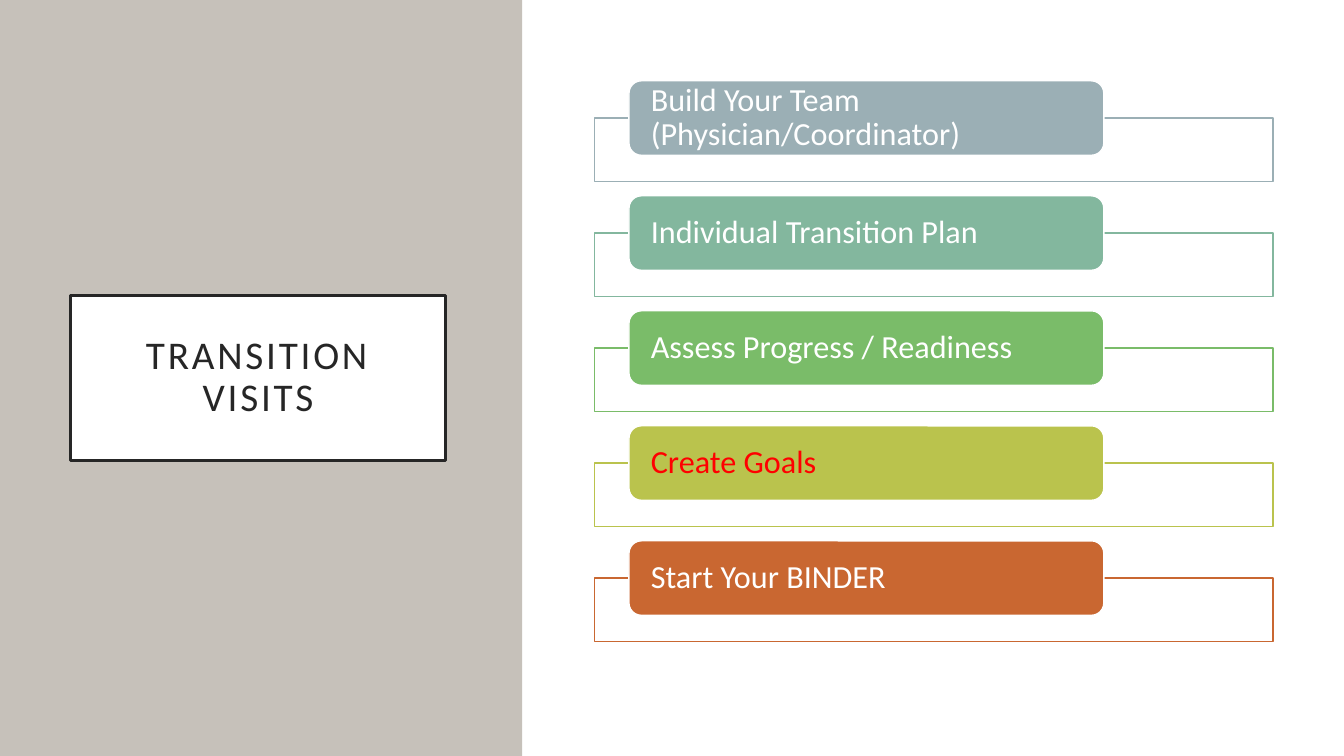
from pptx import Presentation
from pptx.dml.color import RGBColor
from pptx.enum.shapes import MSO_SHAPE as Kind
from pptx.enum.text import MSO_ANCHOR as Anchor, MSO_AUTO_SIZE as Fit, PP_ALIGN as Align
from pptx.util import Pt
from lxml import etree

WHITE = RGBColor(0xFF, 0xFF, 0xFF)
INK = RGBColor(0x26, 0x26, 0x26)
RED = RGBColor(0xFF, 0x00, 0x00)
STONE = RGBColor(0xC6, 0xC1, 0xBA)
SLATE = RGBColor(0x9B, 0xAF, 0xB5)
SAGE = RGBColor(0x83, 0xB7, 0x9E)
GREEN = RGBColor(0x7A, 0xBC, 0x69)
OLIVE = RGBColor(0xBA, 0xC3, 0x4D)
RUST = RGBColor(0xC9, 0x67, 0x31)

FONT = "Calibri"
WIDE, HIGH = 960, 540
TOP, PITCH = 57.7, 82.15

STEPS = [
    ("Build Your Team (Physician/Coordinator)", SLATE, WHITE),
    ("Individual Transition Plan", SAGE, WHITE),
    ("Assess Progress / Readiness", GREEN, WHITE),
    ("Create Goals", OLIVE, RED),
    ("Start Your BINDER", RUST, WHITE),
]


def paint(shape, fill, line=None, width=1):
    shape.fill.solid()
    shape.fill.fore_color.rgb = fill
    if line is None:
        shape.line.fill.background()
    else:
        shape.line.color.rgb = line
        shape.line.width = Pt(width)


def add_box(slide, kind, left, top, width, height, fill, line=None):
    box = slide.shapes.add_shape(kind, Pt(left), Pt(top), Pt(width), Pt(height))
    box.shadow.inherit = False
    paint(box, fill, line)
    return box


def write(shape, text, size, color, align, side, edge):
    frame = shape.text_frame
    frame.word_wrap = True
    frame.auto_size = Fit.NONE
    frame.vertical_anchor = Anchor.MIDDLE
    frame.margin_left = frame.margin_right = Pt(side)
    frame.margin_top = frame.margin_bottom = Pt(edge)
    para = frame.paragraphs[0]
    para.alignment = align
    para.line_spacing = 0.9
    run = para.add_run()
    run.text = text
    run.font.name = FONT
    run.font.size = Pt(size)
    run.font.color.rgb = color
    return run


def add_title(slide, text):
    title = slide.shapes.title
    title.left, title.top = Pt(50.4), Pt(211)
    title.width, title.height = Pt(268), Pt(118)
    paint(title, WHITE, INK, 2.5)
    run = write(title, text, 28, INK, Align.CENTER, 14.4, 14.4)
    # Letter spacing of 2 points
    run.font._element.set("spc", "200")


def add_step(slide, top, text, color, ink):
    frame = add_box(slide, Kind.RECTANGLE, 424.8, top + 26.6, 484.6, 45.4, WHITE, color)
    # Fill at 90 percent opacity
    tint = frame.fill._xPr.solidFill[0]
    name = etree.QName(tint).namespace
    etree.SubElement(tint, f"{{{name}}}alpha", val="90000")
    label = add_box(slide, Kind.ROUNDED_RECTANGLE, 449.3, top, 339.2, 53.2, color, WHITE)
    write(label, text, 23, ink, Align.LEFT, 13, 0)


def main():
    deck = Presentation()
    deck.slide_width, deck.slide_height = Pt(WIDE), Pt(HIGH)
    slide = deck.slides.add_slide(deck.slide_layouts[5])

    # Side panels, the left one behind the title
    side = add_box(slide, Kind.RECTANGLE, 0, 0, 373, HIGH, STONE)
    slide.shapes._spTree.insert(2, side._element)
    add_title(slide, "TRANSITION VISITS")
    add_box(slide, Kind.RECTANGLE, 374, 0, WIDE - 374, HIGH, WHITE)

    # Steps, evenly spaced
    for row, (text, color, ink) in enumerate(STEPS):
        add_step(slide, TOP + row * PITCH, text, color, ink)

    deck.save("out.pptx")


if __name__ == "__main__":
    main()
